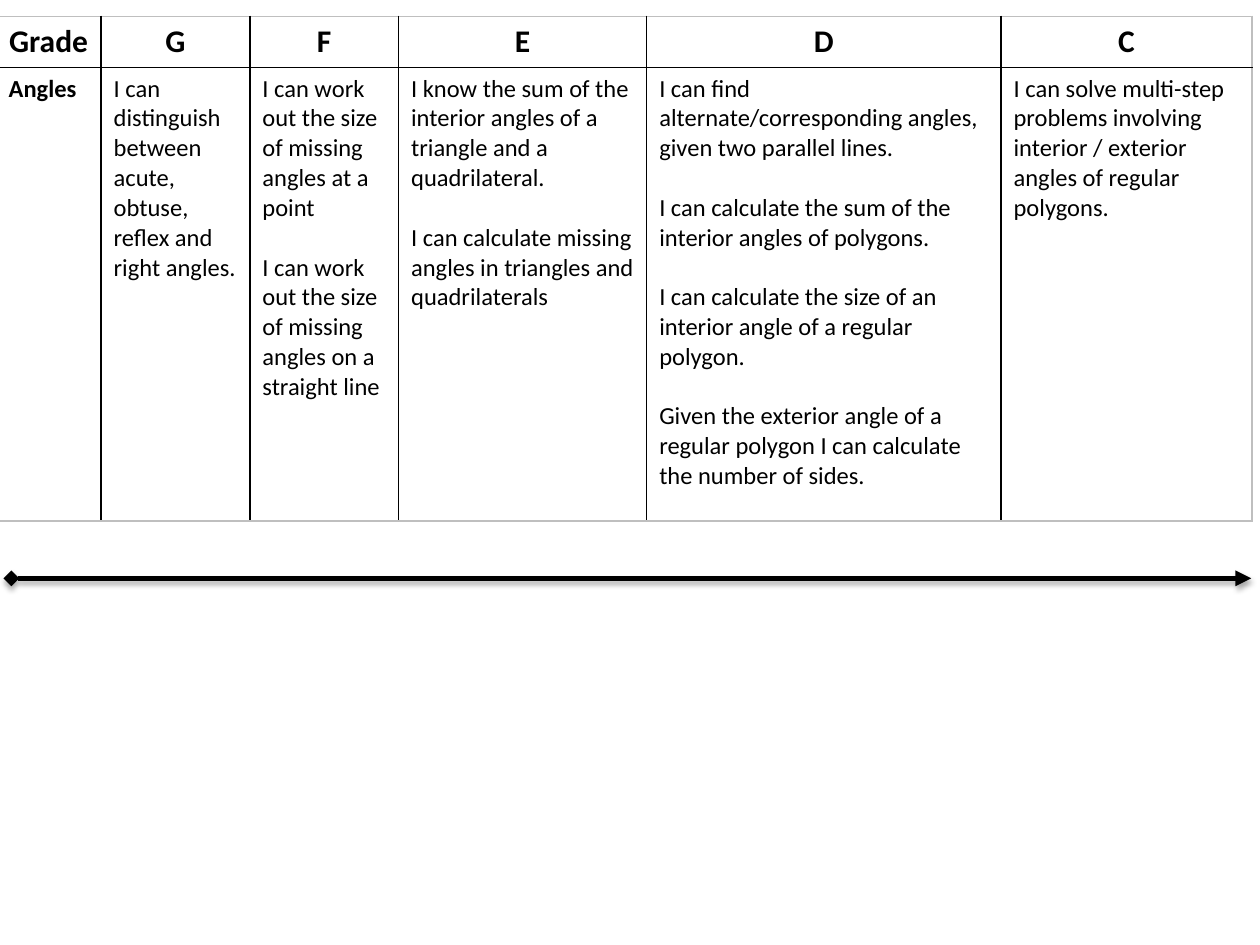
from lxml import etree
from pptx import Presentation
from pptx.dml.color import RGBColor
from pptx.enum.shapes import MSO_CONNECTOR
from pptx.enum.text import PP_ALIGN
from pptx.oxml.ns import qn
from pptx.util import Pt

STRAIGHT = MSO_CONNECTOR.STRAIGHT
LEFT, CENTER = PP_ALIGN.LEFT, PP_ALIGN.CENTER

COLORS = {"ink": "000000", "frame": "BFBFBF"}

COLUMNS = [
    ("Grade", 60, ["Angles"]),
    ("G", 85, ["I can distinguish between acute, obtuse, reflex and right angles."]),
    ("F", 85, [
        "I can work out the size of missing angles at a point",
        "I can work out the size of missing angles on a straight line",
    ]),
    ("E", 141.8, [
        "I know the sum of the interior angles of a triangle and a quadrilateral.",
        "I can calculate missing angles in triangles and quadrilaterals",
    ]),
    ("D", 202.5, [
        "I can find alternate/corresponding angles, given two parallel lines.",
        "I can calculate the sum of the interior angles of polygons.",
        "I can calculate the size of an interior angle of a regular polygon.",
        "Given the exterior angle of a regular polygon I can calculate the number of sides.",
    ]),
    ("C", 143.5, [
        "I can solve multi-step problems involving interior / exterior angles of regular polygons.",
    ]),
]
ROW_HEIGHTS = [28.8, 259.2]
TABLE_LEFT, TABLE_TOP = -2.2, 9.4
ARROW_LEFT, ARROW_RIGHT, ARROW_Y = 6.5, 715, 330.5
STATEMENT_GAP = 17

HEADING = {"size": Pt(18), "bold": True, "name": "Calibri"}
TOPIC = {"size": Pt(14), "bold": True, "name": "Calibri"}
STATEMENT = {"size": Pt(14), "bold": False, "name": "Calibri"}


def add_element(parent, tag, **attributes):
    element = etree.SubElement(parent, qn(tag))
    for name, value in attributes.items():
        element.set(name, str(value))
    return element


def write_cell(cell, texts, font_format, alignment):
    frame = cell.text_frame
    for index, text in enumerate(texts):
        paragraph = frame.paragraphs[0] if index == 0 else frame.add_paragraph()
        paragraph.alignment = alignment
        if index < len(texts) - 1:
            paragraph.space_after = Pt(STATEMENT_GAP)
        run = paragraph.add_run()
        run.text = text
        for name, value in font_format.items():
            setattr(run.font, name, value)
        run.font.color.rgb = RGBColor.from_string(COLORS["ink"])


def draw_borders(cell, outer_sides):
    properties = cell._tc.get_or_add_tcPr()
    for side in ("L", "R", "T", "B"):
        line = add_element(properties, f"a:ln{side}", w=Pt(1))
        color = COLORS["frame" if side in outer_sides else "ink"]
        add_element(add_element(line, "a:solidFill"), "a:srgbClr", val=color)


def add_grade_table(slide):
    width = sum(column_width for _, column_width, _ in COLUMNS)
    table = slide.shapes.add_table(
        len(ROW_HEIGHTS), len(COLUMNS),
        Pt(TABLE_LEFT), Pt(TABLE_TOP), Pt(width), Pt(sum(ROW_HEIGHTS)),
    ).table
    table.first_row = table.horz_banding = False
    for row, height in zip(table.rows, ROW_HEIGHTS):
        row.height = Pt(height)
    for index, (grade, column_width, statements) in enumerate(COLUMNS):
        table.columns[index].width = Pt(column_width)
        side = {0: "L", len(COLUMNS) - 1: "R"}.get(index, "")
        heading, body = table.cell(0, index), table.cell(1, index)
        write_cell(heading, [grade], HEADING, CENTER)
        write_cell(body, statements, STATEMENT if index else TOPIC, LEFT)
        for cell, edge in ((heading, "T"), (body, "B")):
            draw_borders(cell, side + edge)
            cell.fill.background()


def add_progress_arrow(slide):
    arrow = slide.shapes.add_connector(
        STRAIGHT, Pt(ARROW_LEFT), Pt(ARROW_Y), Pt(ARROW_RIGHT), Pt(ARROW_Y)
    )
    arrow.line.width = Pt(3)
    arrow.line.color.rgb = RGBColor.from_string(COLORS["ink"])
    line = arrow.line._get_or_add_ln()
    add_element(line, "a:headEnd", type="diamond")
    add_element(line, "a:tailEnd", type="triangle")
    effects = add_element(arrow._element.spPr, "a:effectLst")
    shadow = add_element(effects, "a:outerShdw", blurRad=Pt(3.1), dist=Pt(1.8),
                         dir=5400000, rotWithShape=0)
    shade = add_element(shadow, "a:srgbClr", val=COLORS["ink"])
    add_element(shade, "a:alpha", val=35000)


def main():
    presentation = Presentation()
    presentation.slide_width, presentation.slide_height = Pt(720), Pt(540)
    slide = presentation.slides.add_slide(presentation.slide_layouts[6])
    add_progress_arrow(slide)
    add_grade_table(slide)
    presentation.save("out.pptx")


if __name__ == "__main__":
    main()
